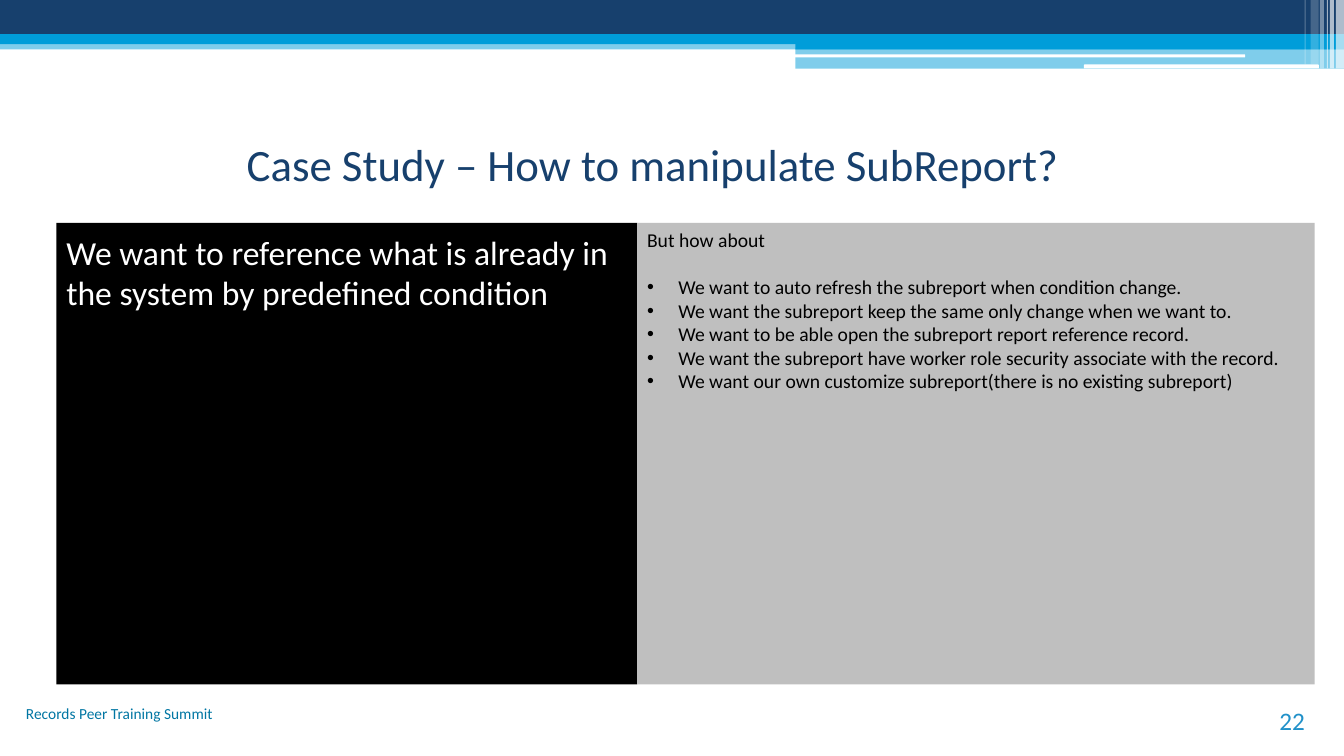
from dataclasses import dataclass

from lxml import etree
from pptx import Presentation
from pptx import util as u
from pptx.dml.color import RGBColor
from pptx.enum import shapes, text
from pptx.oxml import ns

ALIGN = text.PP_ALIGN
ANCHOR = text.MSO_ANCHOR
SHAPE = shapes.MSO_SHAPE
WIDTH, HEIGHT = u.Inches(13.33), u.Inches(7.5)


@dataclass(frozen=True)
class Theme:
    navy: str = "17406D"
    blue: str = "009DD9"
    white: str = "FFFFFF"
    black: str = "000000"
    grey: str = "BFBFBF"
    footer: str = "0076A3"
    number: str = "2191C9"
    font: str = "Calibri"
    title_size: int = 32
    lead_size: int = 24
    number_size: int = 18
    list_size: int = 14
    footer_size: int = 11


@dataclass(frozen=True)
class Area:
    """Left, top, width and height as percent of the slide."""
    left: float
    top: float
    width: float
    height: float

    def emu(self) -> tuple[int, ...]:
        return (round(self.left * WIDTH / 100), round(self.top * HEIGHT / 100),
                round(self.width * WIDTH / 100), round(self.height * HEIGHT / 100))


@dataclass(frozen=True)
class Band:
    area: Area
    color: str
    opacity: int = 100
    kind: SHAPE = SHAPE.RECTANGLE


THEME = Theme()
BANDS = (
    Band(Area(0, 5.33, 100, 1.2), THEME.blue, 50),
    Band(Area(0, 0, 100, 4.53), THEME.navy),
    Band(Area(0, 4.53, 100, 1.33), THEME.blue),
    Band(Area(59.19, 5.2, 40.81, 1.33), THEME.blue),
    Band(Area(59.19, 6.4, 40.81, 2.67), THEME.blue, 50),
    Band(Area(59.11, 7.2, 33.53, 0.4), THEME.white, kind=SHAPE.ROUNDED_RECTANGLE),
    Band(Area(80.65, 8.53, 17.48, 0.53), THEME.white, kind=SHAPE.ROUNDED_RECTANGLE),
)
# Left, width, height and opacity of the stripes in the top right corner
STRIPES = (
    (99.4, 0.6, 9.07, 65), (98.95, 0.3, 9.07, 65), (98.72, 0.08, 9.07, 60),
    (98.2, 0.3, 9.07, 40), (97.52, 0.6, 8.53, 20), (97.07, 0.08, 8.53, 30),
)
PANEL_TOP, PANEL_HEIGHT = 29.47, 61.07
WISHES = (
    "We want to auto refresh the subreport when condition change.",
    "We want the subreport keep the same only change when we want to.",
    "We want to be able open the subreport report reference record.",
    "We want the subreport have worker role security associate with the record.",
    "We want our own customize subreport(there is no existing subreport)",
)


def add_band(page, band: Band):
    box = page.shapes.add_shape(band.kind, *band.area.emu())
    box.shadow.inherit = False
    box.line.fill.background()
    box.fill.solid()
    box.fill.fore_color.rgb = RGBColor.from_string(band.color)
    if band.opacity < 100:
        color = box.fill._xPr.find(".//" + ns.qn("a:srgbClr"))
        etree.SubElement(color, ns.qn("a:alpha"), val=str(band.opacity * 1000))
    return box


def add_text_box(page, area: Area):
    return page.shapes.add_textbox(*area.emu())


def add_bullet(para) -> None:
    properties = para._p.get_or_add_pPr()
    indent = u.Inches(0.31)
    properties.set("marL", str(indent))
    properties.set("indent", str(-indent))
    etree.SubElement(properties, ns.qn("a:buFont"), typeface="Arial")
    etree.SubElement(properties, ns.qn("a:buChar"), char="•")


def write(box, *lines: str, size: int, color: str, align=ALIGN.LEFT,
          anchor=ANCHOR.TOP, bullets: bool = False, gap: float = 0) -> None:
    """Write a heading line; further lines follow after the gap, bulleted on request."""
    frame = box.text_frame
    frame.word_wrap = True
    frame.vertical_anchor = anchor
    for index, line in enumerate(lines):
        para = frame.paragraphs[0] if index == 0 else frame.add_paragraph()
        para.alignment = align
        if index == 1:
            para.space_before = u.Pt(gap)
        if index and bullets:
            add_bullet(para)
        span = para.add_run()
        span.text = line
        span.font.name = THEME.font
        span.font.size = u.Pt(size)
        span.font.color.rgb = RGBColor.from_string(color)


def main() -> None:
    deck = Presentation()
    deck.slide_width, deck.slide_height = WIDTH, HEIGHT
    page = deck.slides.add_slide(deck.slide_layouts[6])

    for band in BANDS:
        add_band(page, band)
    for left, width, height, opacity in STRIPES:
        add_band(page, Band(Area(left, 0, width, height), THEME.white, opacity))

    write(add_text_box(page, Area(4.2, 13.87, 88.75, 15.6)),
          "Case Study – How to manipulate SubReport?", size=THEME.title_size,
          color=THEME.navy, align=ALIGN.CENTER, anchor=ANCHOR.MIDDLE)
    lead = add_band(page, Band(Area(4.2, PANEL_TOP, 43.21, PANEL_HEIGHT), THEME.black))
    write(lead, "We want to reference what is already in the system by predefined condition",
          size=THEME.lead_size, color=THEME.white)
    lead.text_frame.margin_top = u.Inches(0.09)
    write(add_text_box(page, Area(0, 92.53, 16.58, 6.67)), "Records Peer Training Summit",
          size=THEME.footer_size, color=THEME.footer, align=ALIGN.RIGHT)
    write(add_text_box(page, Area(89.5, 92.67, 8.33, 5.33)), "22", size=THEME.number_size,
          color=THEME.number, align=ALIGN.RIGHT, anchor=ANCHOR.BOTTOM)
    questions = add_band(page, Band(Area(47.41, PANEL_TOP, 50.41, PANEL_HEIGHT), THEME.grey))
    write(questions, "But how about", *WISHES, size=THEME.list_size, color=THEME.black,
          bullets=True, gap=17)

    deck.save("out.pptx")


if __name__ == "__main__":
    main()
